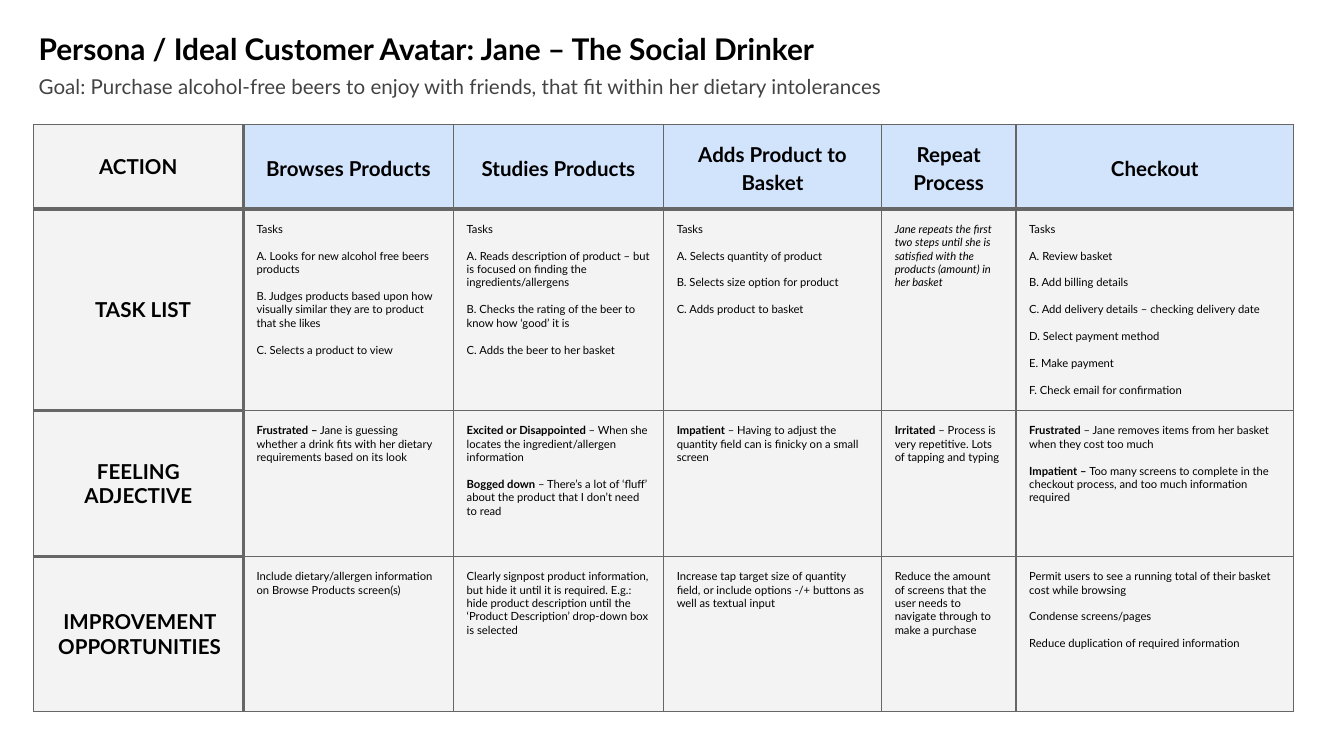
from lxml.etree import SubElement
from pptx import Presentation
from pptx.dml.color import RGBColor
from pptx.enum.text import MSO_ANCHOR, MSO_AUTO_SIZE, PP_ALIGN
from pptx.oxml.ns import qn
from pptx.util import Cm, Pt

FONT = "Lato"
BLACK, GOAL_GREY, BORDER_GREY = "000000", "434343", "666666"
LABEL_FILL, ACTION_FILL = "F3F3F3", "D2E3FC"
INSET = Cm(0.25)
COLUMN_WIDTHS = (3.97, 3.97, 3.97, 4.12, 2.54, 5.25)
ROW_HEIGHTS = (1.59, 3.81, 2.76, 2.93)

ACTIONS = ("Browses Products", "Studies Products", "Adds Product to Basket",
           "Repeat Process", "Checkout")
LABELS = ("ACTION", "TASK LIST", "FEELING ADJECTIVE", "IMPROVEMENT OPPORTUNITIES")
REPEAT_NOTE = ("Jane repeats the first two steps until she is satisfied with the "
               "products (amount) in her basket")

TASKS = (
    ("Tasks", "A. Looks for new alcohol free beers products",
     "B. Judges products based upon how visually similar they are to product that she likes",
     "C. Selects a product to view"),
    ("Tasks",
     "A. Reads description of product – but is focused on finding the ingredients/allergens",
     "B. Checks the rating of the beer to know how ‘good’ it is",
     "C. Adds the beer to her basket"),
    ("Tasks", "A. Selects quantity of product", "B. Selects size option for product",
     "C. Adds product to basket"),
    (REPEAT_NOTE,),
    ("Tasks", "A. Review basket", "B. Add billing details",
     "C. Add delivery details – checking delivery date", "D. Select payment method",
     "E. Make payment", "F. Check email for confirmation"),
)
FEELINGS = (
    (("Frustrated –", " Jane is guessing whether a drink fits with her dietary "
      "requirements based on its look"),),
    (("Excited or Disappointed ", "– When she locates the ingredient/allergen information"),
     ("Bogged down", " – There’s a lot of ‘fluff’ about the product that I don’t need to read")),
    (("Impatient", " – Having to adjust the quantity field can is finicky on a small screen"),),
    (("Irritated", " – Process is very repetitive. Lots of tapping and typing"),),
    (("Frustrated", " – Jane removes items from her basket when they cost too much"),
     ("Impatient – ", "Too many screens to complete in the checkout process, "
      "and too much information required")),
)
IMPROVEMENTS = (
    ("Include dietary/allergen information on Browse Products screen(s)",),
    ("Clearly signpost product information, but hide it until it is required. E.g.: hide "
     "product description until the ‘Product Description’ drop-down box is selected",),
    ("Increase tap target size of quantity field, or include options -/+ buttons "
     "as well as textual input",),
    ("Reduce the amount of screens that the user needs to navigate through to make a purchase",),
    ("Permit users to see a running total of their basket cost while browsing",
     "Condense screens/pages", "Reduce duplication of required information"),
)


def color(value):
    """Return the colour for a hex string."""
    return RGBColor.from_string(value)


def style(paragraph, size, shade=BLACK, bold=False, italic=False):
    """Set the font of a whole paragraph."""
    font = paragraph.font
    font.name, font.size, font.italic = FONT, Pt(size), italic
    font.color.rgb = color(shade)
    if bold is not None:
        font.bold = bold


def fill_heading(heading, wording, box, size, shade, bold):
    """Place a heading placeholder and write its single line."""
    heading.left, heading.top, heading.width, heading.height = map(Cm, box)
    frame = heading.text_frame
    frame.word_wrap, frame.auto_size = True, MSO_AUTO_SIZE.NONE
    frame.vertical_anchor = MSO_ANCHOR.TOP
    frame.margin_left = frame.margin_right = frame.margin_top = frame.margin_bottom = INSET
    line = frame.paragraphs[0]
    line.text = wording
    line.alignment = PP_ALIGN.LEFT
    line.space_before = Pt(0)
    style(line, size, shade, bold)


def draw_borders(cell, row, column):
    """Draw cell edges, heavier around the header row and label column."""
    is_label = column == 0
    heavy_edges = {
        "a:lnL": column == 1,
        "a:lnR": is_label,
        "a:lnT": row == 1 or is_label and row > 0,
        "a:lnB": row == 0 or is_label and row < len(ROW_HEIGHTS) - 1,
    }
    properties = cell._tc.get_or_add_tcPr()
    for edge, heavy in heavy_edges.items():
        line = SubElement(properties, qn(edge), w=str(Pt(2.25 if heavy else 0.75)))
        solid = SubElement(line, qn("a:solidFill"))
        SubElement(solid, qn("a:srgbClr"), val=BORDER_GREY)


def prepare_cell(cell, row, column, fill):
    """Set the borders, fill and insets of a cell."""
    draw_borders(cell, row, column)
    cell.fill.solid()
    cell.fill.fore_color.rgb = color(fill)
    cell.margin_left = cell.margin_right = cell.margin_top = cell.margin_bottom = INSET


def write_label(cell, wording, spacing=1.0):
    """Write a centred bold row or column label."""
    cell.vertical_anchor = MSO_ANCHOR.MIDDLE
    label = cell.text_frame.paragraphs[0]
    label.text = wording
    label.alignment = PP_ALIGN.CENTER
    label.line_spacing = spacing
    style(label, 11, bold=True)


def write_notes(cell, notes):
    """Write spaced notes, each a string or a bold lead with its remainder."""
    frame = cell.text_frame
    for index, note in enumerate(notes):
        paragraph = frame.add_paragraph() if index else frame.paragraphs[0]
        if index:
            paragraph.space_before = Pt(7.2)
        if isinstance(note, str):
            paragraph.text = note
            style(paragraph, 6, italic=note == REPEAT_NOTE)
        else:
            for wording, bold in zip(note, (True, False)):
                run = paragraph.add_run()
                run.text, run.font.bold = wording, bold
            style(paragraph, 6, bold=None)


def add_journey(slide):
    """Add the customer journey table."""
    journey = slide.shapes.add_table(
        len(ROW_HEIGHTS), len(COLUMN_WIDTHS), Cm(0.63), Cm(2.36),
        Cm(sum(COLUMN_WIDTHS)), Cm(sum(ROW_HEIGHTS))).table
    journey.first_row = journey.horz_banding = False
    for column, width in zip(journey.columns, COLUMN_WIDTHS):
        column.width = Cm(width)
    for row, height in zip(journey.rows, ROW_HEIGHTS):
        row.height = Cm(height)

    for row, contents in enumerate((ACTIONS, TASKS, FEELINGS, IMPROVEMENTS)):
        label_cell = journey.cell(row, 0)
        prepare_cell(label_cell, row, 0, LABEL_FILL)
        write_label(label_cell, LABELS[row])
        for column, content in enumerate(contents, start=1):
            cell = journey.cell(row, column)
            prepare_cell(cell, row, column, LABEL_FILL if row else ACTION_FILL)
            if row:
                write_notes(cell, content)
            else:
                write_label(cell, content, 1.15)

    task_label = journey.cell(1, 0).text_frame.paragraphs[0]._p.get_or_add_pPr()
    task_label.set("marL", str(Cm(0.48)))
    task_label.set("indent", str(Cm(-0.3)))
    journey.cell(3, 0).margin_left = Cm(0.3)


def main():
    """Build and save the persona slide."""
    deck = Presentation()
    deck.slide_width, deck.slide_height = Cm(25.4), Cm(14.29)
    slide = deck.slides.add_slide(deck.slide_layouts[0])
    persona, goal = slide.placeholders
    fill_heading(persona, "Persona / Ideal Customer Avatar: Jane – The Social Drinker",
                 (0.48, 0.33, 18.03, 1.12), 16, BLACK, True)
    fill_heading(goal, "Goal: Purchase alcohol-free beers to enjoy with friends, "
                 "that fit within her dietary intolerances",
                 (0.48, 1.14, 23.58, 0.76), 11, GOAL_GREY, False)
    add_journey(slide)
    deck.save("out.pptx")


if __name__ == "__main__":
    main()
